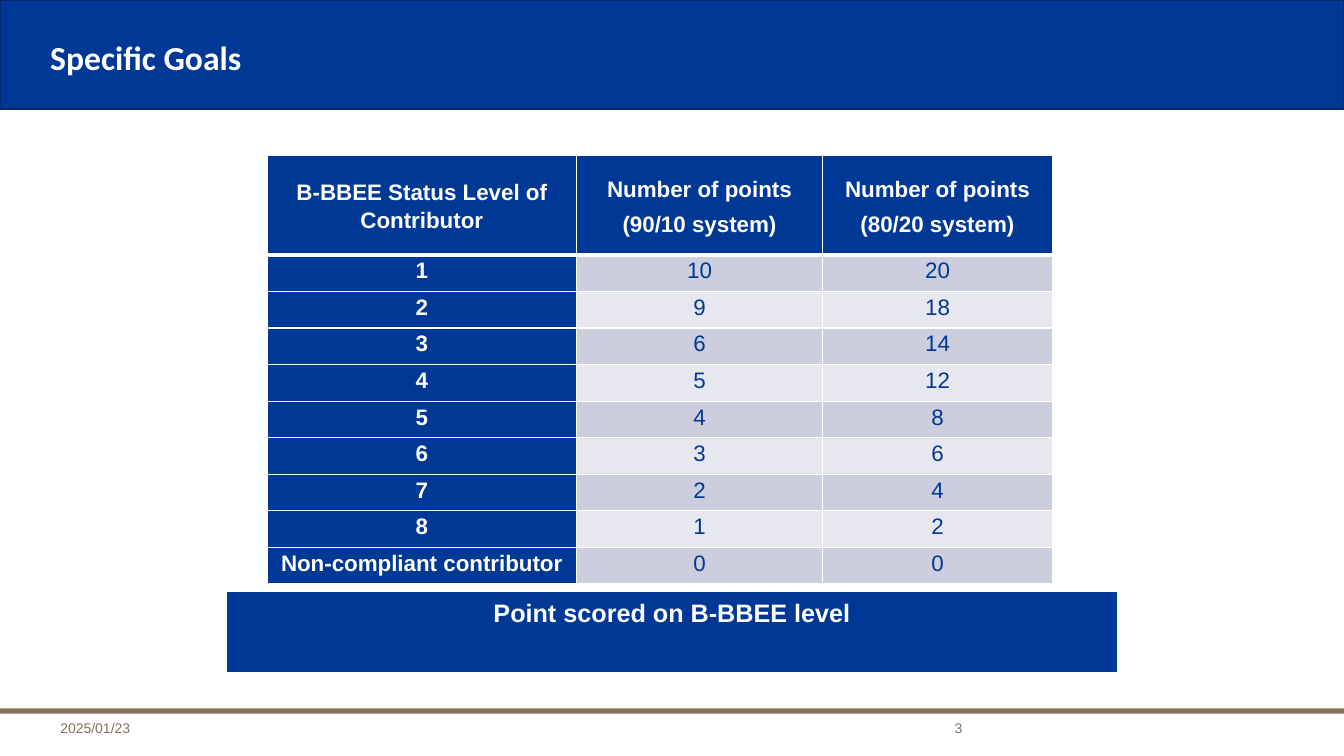
from lxml.etree import SubElement
from pptx import Presentation
from pptx.dml.color import RGBColor
from pptx.enum.shapes import MSO_SHAPE
from pptx.enum.text import MSO_ANCHOR, PP_ALIGN
from pptx.oxml.ns import qn
from pptx.util import Pt

COLORS = {
    "blue": "003896",
    "navy": "00296F",
    "brown": "83725B",
    "white": "FFFFFF",
    "dark": "CCCEDD",
    "light": "E7E8EF",
}


def add_bar(left, top, width, height, fill, line=None, weight=0):
    bar = slide.shapes.add_shape(
        MSO_SHAPE.RECTANGLE, Pt(left), Pt(top), Pt(width), Pt(height))
    bar.shadow.inherit = False
    bar.fill.solid()
    bar.fill.fore_color.rgb = RGBColor.from_string(COLORS[fill])
    if line:
        bar.line.color.rgb = RGBColor.from_string(COLORS[line])
        bar.line.width = Pt(weight)
    else:
        bar.line.fill.background()
    return bar


def set_text(frame, lines, size, color, bold=False, align=PP_ALIGN.LEFT,
             font="Arial", space=None):
    frame.word_wrap = True
    frame.text = "\n".join(lines)
    for para in frame.paragraphs:
        para.alignment = align
        para.line_spacing = space
        para.font.size = Pt(size)
        para.font.name = font
        para.font.bold = bold
        para.font.color.rgb = RGBColor.from_string(COLORS[color])


deck = Presentation()
deck.slide_width, deck.slide_height = Pt(960), Pt(540)
slide = deck.slides.add_slide(deck.slide_layouts[6])

add_bar(0, 0, 960, 78, "blue", "navy", 1)
add_bar(0, 506, 960, 3.8, "brown")

title = slide.shapes.add_textbox(Pt(28.8), Pt(16.5), Pt(749), Pt(52.5)).text_frame
set_text(title, ["Specific Goals"], 24, "white", True, font="Calibri", space=0.9)
title.vertical_anchor = MSO_ANCHOR.MIDDLE

for text, left, width, align in [
    ("2025/01/23", 36, 137, PP_ALIGN.LEFT),
    ("3", 564.5, 130, PP_ALIGN.RIGHT),
]:
    foot = slide.shapes.add_textbox(Pt(left), Pt(508.3), Pt(width), Pt(21)).text_frame
    set_text(foot, [text], 10, "brown", align=align)
    foot.vertical_anchor = MSO_ANCHOR.BOTTOM

note = add_bar(162.5, 423.3, 635, 56.7, "blue", "blue", 0.75).text_frame
set_text(note, ["Point scored on B-BBEE level"], 18, "white", True, PP_ALIGN.CENTER)
note.vertical_anchor = MSO_ANCHOR.TOP

rows = [
    ("B-BBEE Status Level of Contributor",
     "Number of points\n(90/10 system)",
     "Number of points\n(80/20 system)"),
    ("1", "10", "20"),
    ("2", "9", "18"),
    ("3", "6", "14"),
    ("4", "5", "12"),
    ("5", "4", "8"),
    ("6", "3", "6"),
    ("7", "2", "4"),
    ("8", "1", "2"),
    ("Non-compliant contributor", "0", "0"),
]
widths = [220.7, 176, 164]
heights = [71] + [26.15] * 9
table = slide.shapes.add_table(
    len(rows), len(widths), Pt(191), Pt(111),
    Pt(sum(widths)), Pt(sum(heights))).table
table.first_col = True
for col, width in zip(table.columns, widths):
    col.width = Pt(width)
for row, height in zip(table.rows, heights):
    row.height = Pt(height)

for r, row in enumerate(rows):
    for c, text in enumerate(row):
        cell = table.cell(r, c)
        head = r == 0 or c == 0
        cell.margin_left = cell.margin_right = Pt(5)
        cell.margin_top = cell.margin_bottom = 0
        cell.vertical_anchor = MSO_ANCHOR.TOP if r else MSO_ANCHOR.MIDDLE
        set_text(cell.text_frame, text.split("\n"), 16,
                 "white" if head else "blue", head, PP_ALIGN.CENTER, space=1.15)
        for para in cell.text_frame.paragraphs[1:]:
            para.space_before = Pt(4.8)
        props = cell._tc.get_or_add_tcPr()
        for side in ["L", "R", "T", "B"]:
            thick = (r, side) in [(0, "B"), (1, "T")]
            edge = SubElement(props, qn("a:ln" + side), w=str(Pt(3 if thick else 1)))
            fill = SubElement(edge, qn("a:solidFill"))
            SubElement(fill, qn("a:srgbClr"), val=COLORS["white"])
        shade = "blue" if head else "dark" if r % 2 else "light"
        cell.fill.solid()
        cell.fill.fore_color.rgb = RGBColor.from_string(COLORS[shade])

deck.save("out.pptx")
